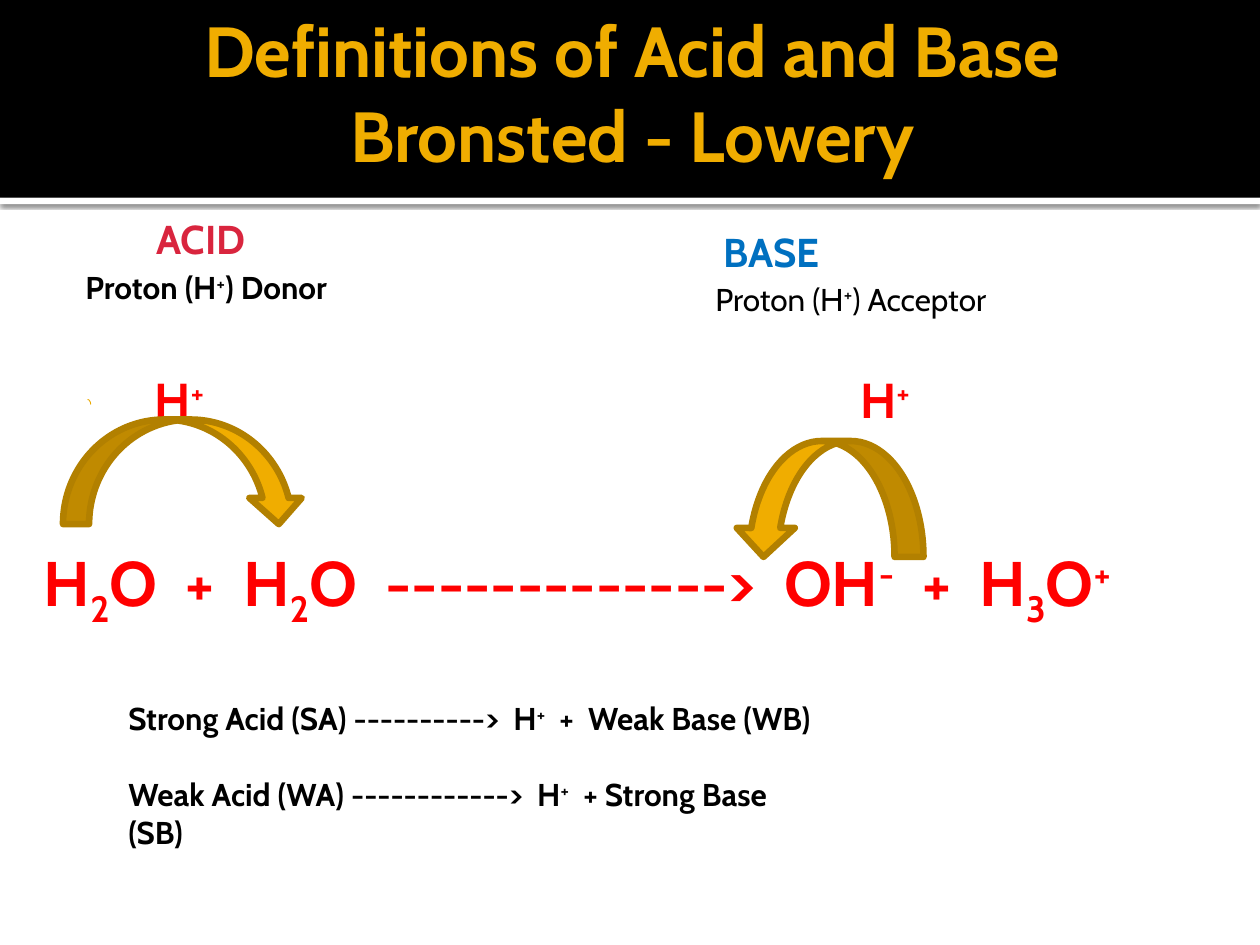
from lxml import etree
from pptx import Presentation
from pptx import util as u
from pptx.dml.color import RGBColor
from pptx.enum import shapes, text
from pptx.oxml import ns

BLACK = RGBColor(0x00, 0x00, 0x00)
WHITE = RGBColor(0xFF, 0xFF, 0xFF)
GOLD = RGBColor(0xF0, 0xAD, 0x00)
DARK_GOLD = RGBColor(0xB2, 0x80, 0x00)
ARC_GOLD = RGBColor(0xEB, 0xA9, 0x00)
CRIMSON = RGBColor(0xD9, 0x25, 0x3E)
BLUE = RGBColor(0x00, 0x70, 0xC0)
RED = RGBColor(0xFF, 0x00, 0x00)

SUPER, SUB = 30, -25
PROTON = [("H", 0), ("+", SUPER)]


class SlideBuilder:
    """Hold the style and the current slide, and draw each kind of element."""

    font = "Cabin"

    def __init__(self, presentation):
        self.slide = presentation.slides.add_slide(presentation.slide_layouts[4])

    def place(self, shape, box):
        shape.left, shape.top, shape.width, shape.height = map(u.Inches, box)

    def add_runs(self, paragraph, parts, size, color, bold=True):
        for wording, baseline in parts:
            run = paragraph.add_run()
            run.text = wording
            font = run.font
            font.name, font.size, font.bold = self.font, u.Pt(size), bold
            font.color.rgb = color
            if baseline:
                font._element.set("baseline", str(baseline * 1000))

    def frame(self, shape, insets, anchor):
        frame = shape.text_frame
        frame.word_wrap = True
        frame.auto_size = text.MSO_AUTO_SIZE.NONE
        frame.vertical_anchor = anchor
        (frame.margin_left, frame.margin_top,
         frame.margin_right, frame.margin_bottom) = map(u.Inches, insets)
        return frame

    def placeholder(self, index, box, lines, size, color, insets, align):
        shape = self.slide.placeholders[index]
        self.place(shape, box)
        frame = self.frame(shape, insets, text.MSO_ANCHOR.MIDDLE)
        paragraph = frame.paragraphs[0]
        paragraph.alignment = align
        paragraph.space_before = u.Pt(0)
        for number, line in enumerate(lines):
            if number:
                paragraph.add_line_break()
            self.add_runs(paragraph, [(line, 0)], size, color)

    def text_box(self, box, lines, color=BLACK, bold=True, gap=0, top=0.05, tabs=()):
        shape = self.slide.shapes.add_textbox(*map(u.Inches, box))
        frame = self.frame(shape, (0.1, top, 0.1, 0.05), text.MSO_ANCHOR.TOP)
        for number, (size, parts) in enumerate(lines):
            paragraph = frame.add_paragraph() if number else frame.paragraphs[0]
            if number:
                paragraph.space_before = u.Pt(gap)
            self.add_runs(paragraph, parts, size, color, bold)
        if tabs:
            properties = frame.paragraphs[0]._p.get_or_add_pPr()
            stops = etree.SubElement(properties, ns.qn("a:tabLst"))
            for position in tabs:
                etree.SubElement(stops, ns.qn("a:tab"), pos=str(u.Inches(position)), algn="l")

    def shape(self, kind, box, fill=None, line=None, width=0, flip=False):
        shape = self.slide.shapes.add_shape(kind, *map(u.Inches, box))
        shape.shadow.inherit = False
        if fill is None:
            shape.fill.background()
        else:
            shape.fill.solid()
            shape.fill.fore_color.rgb = fill
        if line is None:
            shape.line.fill.background()
        else:
            shape.line.color.rgb = line
            shape.line.width = u.Pt(width)
        if flip:
            shape._element.spPr.xfrm.set("flipH", "1")
        return shape

    def send_to_back(self, shape):
        self.slide.shapes._spTree.insert(2, shape._element)

    def add_shadow(self, shape, blur, distance, opacity):
        effects = shape._element.spPr.find(ns.qn("a:effectLst"))
        shadow = etree.SubElement(effects, ns.qn("a:outerShdw"), blurRad=str(u.Pt(blur)),
                                  dist=str(u.Pt(distance)), dir="5400000", rotWithShape="0")
        color = etree.SubElement(shadow, ns.qn("a:srgbClr"), val=str(BLACK))
        etree.SubElement(color, ns.qn("a:alpha"), val=str(opacity * 1000))

    def remove_empty_placeholders(self):
        for shape in list(self.slide.placeholders):
            if not shape.text_frame.text:
                shape._element.getparent().remove(shape._element)


def main():
    presentation = Presentation()
    presentation.slide_width, presentation.slide_height = u.Inches(10), u.Inches(7.5)
    builder = SlideBuilder(presentation)
    kinds = shapes.MSO_SHAPE

    band = builder.shape(kinds.RECTANGLE, (0, 0, 10, 1.57), BLACK)
    strip = builder.shape(kinds.RECTANGLE, (0, 1.57, 10, 0.05), WHITE)
    builder.add_shadow(strip, 2.5, 0.8, 60)
    for backdrop in (band, strip):
        builder.send_to_back(backdrop)

    builder.placeholder(0, (1.33, 0.25, 7.33, 1.25),
                        ["Definitions of Acid and Base", "Bronsted - Lowery"],
                        40.5, GOLD, (0.1, 0.05, 0.05, 0.34), text.PP_ALIGN.CENTER)
    for index, box, name, color in (
        (1, (1.08, 1.5, 2.5, 0.74), "ACID", CRIMSON),
        (3, (5.58, 1.58, 1.5, 0.78), "BASE", BLUE),
    ):
        builder.placeholder(index, box, [name], 23, color,
                            (0.16, 0.1, 0.1, 0.05), text.PP_ALIGN.LEFT)
    builder.remove_empty_placeholders()

    protons = [("\tH", 0), ("+", SUPER)] * 2
    equation = [("H", 0), ("2", SUB), ("O  +  H", 0), ("2", SUB),
                ("O  ------------->  OH", 0), ("-", SUPER),
                ("  +  H", 0), ("3", SUB), ("O", 0), ("+", SUPER)]
    builder.text_box((0.25, 2.58, 9.17, 2.69), [(28, protons), (36, equation)],
                     RED, gap=66, top=0.35, tabs=(0.88, 6.48))

    for box, role, bold in (
        ((0.58, 2.08, 2.17, 0.71), "Donor", True),
        ((5.58, 2.17, 2.36, 0.71), "Acceptor", False),
    ):
        parts = [("Proton (H", 0), ("+", SUPER), (f") {role}", 0)]
        builder.text_box(box, [(18, parts)], bold=bold)

    reactions = [
        [("Strong Acid (SA) ---------->  ", 0), *PROTON, ("  +  Weak Base (WB)", 0)],
        [("Weak Acid (WA) ------------>  ", 0), *PROTON, ("  + Strong Base (SB)", 0)],
    ]
    builder.text_box((0.92, 5.5, 5.65, 1.01), [(18, parts) for parts in reactions], gap=22)

    builder.shape(kinds.ARC, (0.67, 3.17, 0.05, 0.08), line=ARC_GOLD, width=0.5)
    for box, flip in (((0.5, 3.33, 1.92, 0.83), False), ((5.83, 3.5, 1.5, 0.92), True)):
        builder.shape(kinds.CURVED_DOWN_ARROW, box, GOLD, DARK_GOLD, 3.78, flip)

    presentation.save("out.pptx")


if __name__ == "__main__":
    main()
